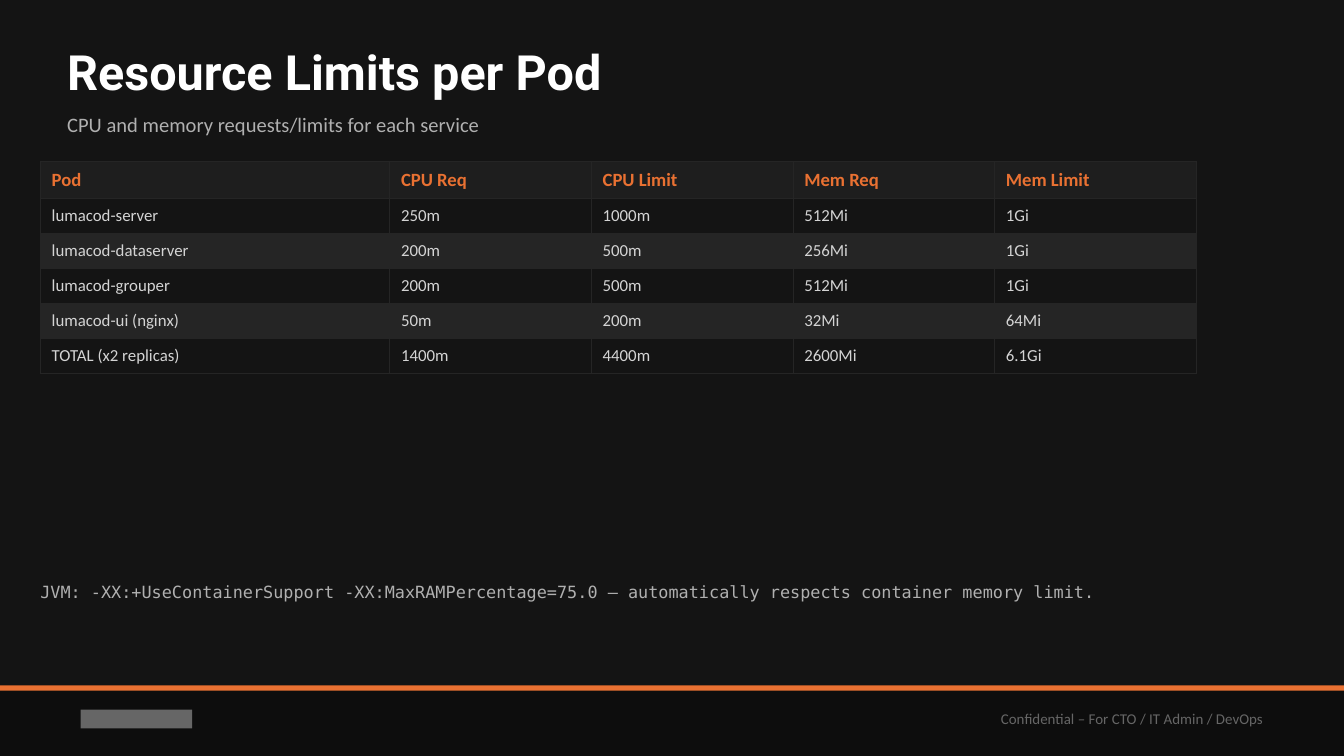
from lxml import etree
from pptx import Presentation
from pptx.dml.color import RGBColor
from pptx.enum.shapes import MSO_SHAPE
from pptx.enum.text import MSO_ANCHOR, PP_ALIGN
from pptx.oxml.ns import qn
from pptx.util import Pt

RECTANGLE = MSO_SHAPE.RECTANGLE
MIDDLE = MSO_ANCHOR.MIDDLE
LEFT, RIGHT = PP_ALIGN.LEFT, PP_ALIGN.RIGHT

SCALE = 4572
PAGE_WIDTH, PAGE_HEIGHT = 2000, 1125
BORDER_WIDTH = Pt(0.5)
HEADING, BODY, MONO = "Roboto", "Calibri", "DejaVu Sans Mono"
COLORS = {
    "page": "141414",
    "footer": "0D0D0D",
    "accent": "E97132",
    "white": "FFFFFF",
    "muted": "B0B0B0",
    "faint": "666666",
    "cell_text": "D4D4D4",
    "header": "1E1E1E",
    "band": "252525",
}
POD_LIMITS = [
    ("Pod", "CPU Req", "CPU Limit", "Mem Req", "Mem Limit"),
    ("lumacod-server", "250m", "1000m", "512Mi", "1Gi"),
    ("lumacod-dataserver", "200m", "500m", "256Mi", "1Gi"),
    ("lumacod-grouper", "200m", "500m", "512Mi", "1Gi"),
    ("lumacod-ui (nginx)", "50m", "200m", "32Mi", "64Mi"),
    ("TOTAL (x2 replicas)", "1400m", "4400m", "2600Mi", "6.1Gi"),
]


def px(length):
    return length * SCALE


def color(name):
    return RGBColor.from_string(COLORS[name])


def add_run(para, text, size, font, color_name, bold=False):
    span = para.add_run()
    span.text = text
    span.font.size = Pt(size)
    span.font.name = font
    span.font.bold = bold
    span.font.color.rgb = color(color_name)


def add_text(page, box, runs, align=LEFT, inset=(0, 0)):
    frame = page.shapes.add_textbox(*map(px, box)).text_frame
    frame.word_wrap = True
    frame.vertical_anchor = MIDDLE
    frame.margin_left = frame.margin_right = px(inset[0])
    frame.margin_top = frame.margin_bottom = px(inset[1])
    para = frame.paragraphs[0]
    para.alignment = align
    for run in runs:
        add_run(para, *run)


def add_bar(page, box, color_name):
    bar = page.shapes.add_shape(RECTANGLE, *map(px, box))
    bar.shadow.inherit = False
    bar.fill.solid()
    bar.fill.fore_color.rgb = color(color_name)
    bar.line.fill.background()


def add_footer(page, box):
    left, top, width, height = box
    add_bar(page, box, "footer")
    add_bar(page, (left, top, width, 8), "accent")
    add_bar(page, (left + 120, top + 36, 166, 28), "faint")
    notice = [("Confidential – For CTO / IT Admin / DevOps", 8, BODY, "faint")]
    add_text(page, (left + width - 900, top + 10, 800, 80), notice, RIGHT, (20, 10))


def add_heading(page, box):
    left, top, width, height = box
    title = [("Resource Limits per Pod", 26, HEADING, "white", True)]
    add_text(page, (left, top, width, 110), title)
    subtitle = [("CPU and memory requests/limits for each service", 11, BODY, "muted")]
    add_text(page, (left, top + height - 70, width, 70), subtitle)


def add_borders(cell):
    properties = cell._tc.get_or_add_tcPr()
    for side in ("lnL", "lnR", "lnT", "lnB"):
        line = etree.SubElement(properties, qn(f"a:{side}"), w=str(BORDER_WIDTH))
        fill = etree.SubElement(line, qn("a:solidFill"))
        etree.SubElement(fill, qn("a:srgbClr"), val=COLORS["band"])


def style_cell(cell, text, row_index):
    cell.margin_left = cell.margin_right = px(17)
    cell.margin_top = cell.margin_bottom = px(11)
    cell.vertical_anchor = MIDDLE
    add_borders(cell)
    cell.fill.solid()
    para = cell.text_frame.paragraphs[0]
    if row_index == 0:
        cell.fill.fore_color.rgb = color("header")
        add_run(para, text, 10, BODY, "accent", True)
    else:
        cell.fill.fore_color.rgb = color("page" if row_index % 2 else "band")
        add_run(para, text, 9, BODY, "cell_text")


def add_limits_table(page, box):
    table = page.shapes.add_table(len(POD_LIMITS), len(POD_LIMITS[0]), *map(px, box)).table
    table.horz_banding = False
    for index, column in enumerate(table.columns):
        column.width = px(300 if index else 520)
    for row_index, values in enumerate(POD_LIMITS):
        table.rows[row_index].height = px(52)
        for column_index, text in enumerate(values):
            style_cell(table.cell(row_index, column_index), text, row_index)


def add_jvm_note(page, box):
    note = (
        "JVM: -XX:+UseContainerSupport -XX:MaxRAMPercentage=75.0 "
        "— automatically respects container memory limit."
    )
    add_text(page, box, [(note, 9, MONO, "muted")])


def main():
    deck = Presentation()
    deck.slide_width, deck.slide_height = px(PAGE_WIDTH), px(PAGE_HEIGHT)
    page = deck.slides.add_slide(deck.slide_layouts[6])
    page.background.fill.solid()
    page.background.fill.fore_color.rgb = color("page")
    add_footer(page, (0, 1020, PAGE_WIDTH, PAGE_HEIGHT - 1020))
    add_heading(page, (100, 50, 1800, 170))
    add_limits_table(page, (60, 240, 1720, 312))
    add_jvm_note(page, (60, 840, 1880, 80))
    deck.save("out.pptx")


if __name__ == "__main__":
    main()
